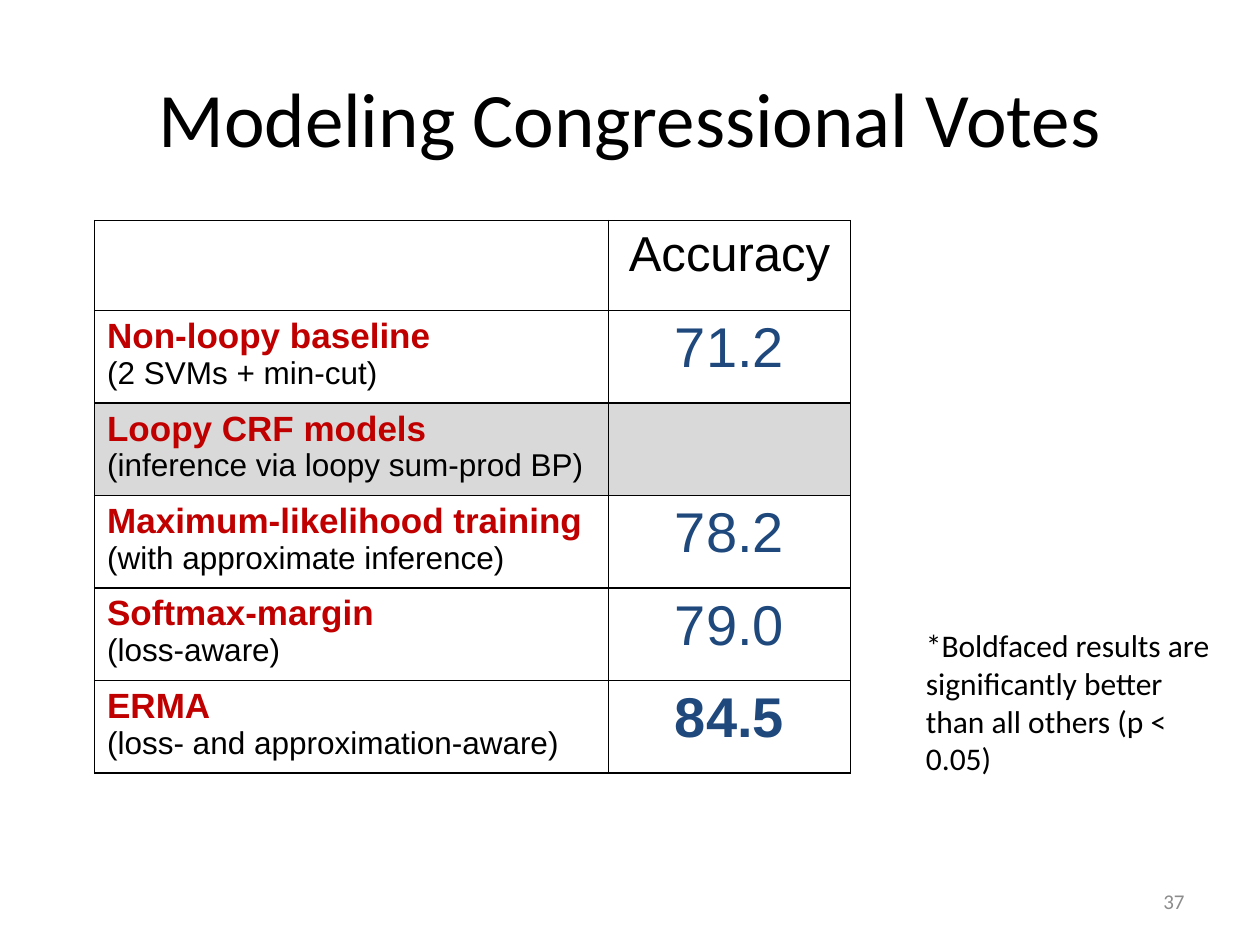
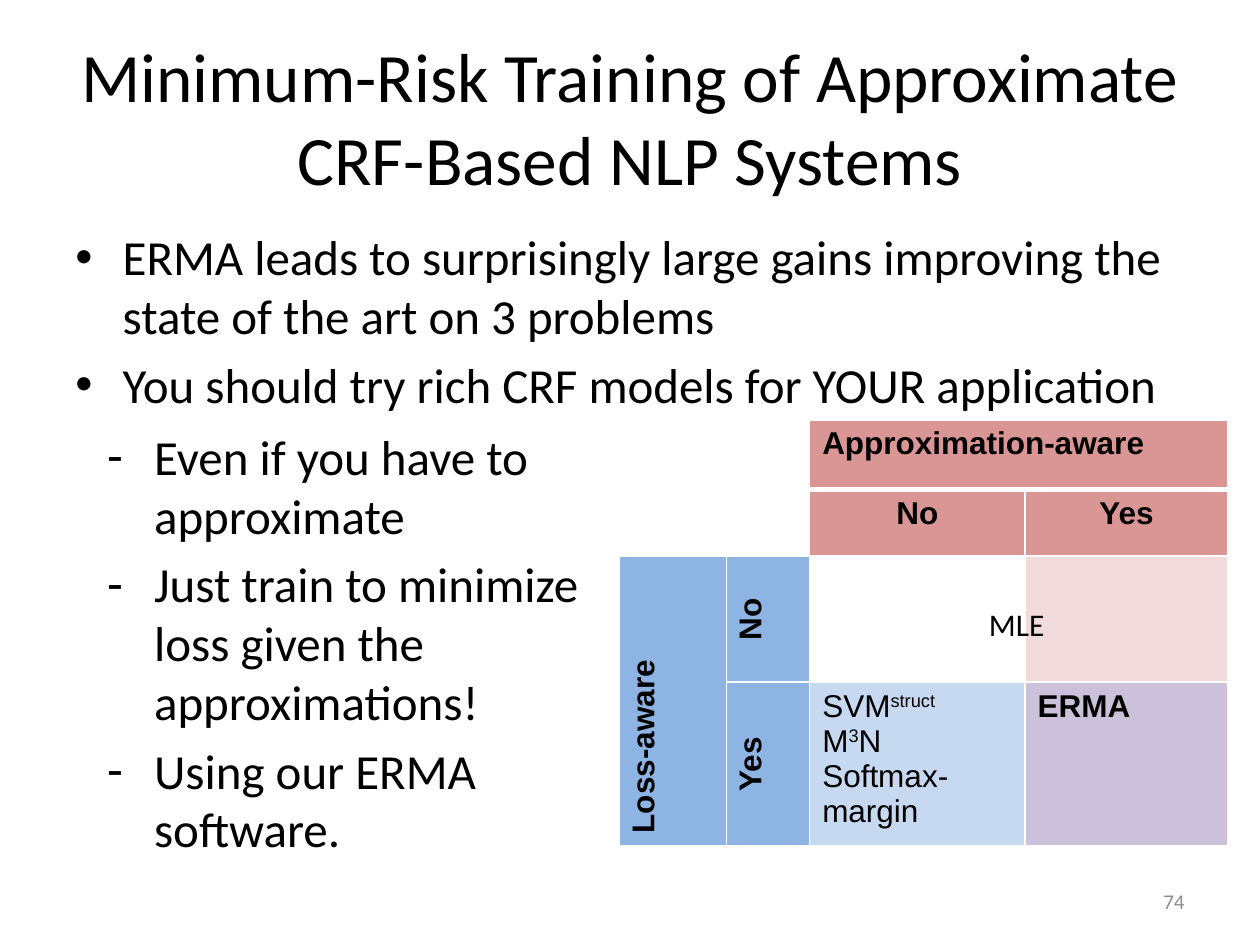
from pptx import Presentation
from pptx import util as u
from pptx.dml.color import RGBColor
from pptx.enum import text
from pptx.oxml.ns import qn
from lxml import etree

COLORS = {
    "ink": "000000", "paper": "FFFFFF", "number": "8C8C8C",
    "method": "C00000", "score": "1F497D", "group": "D9D9D9",
    "approx": "D99694", "approx_light": "F2DCDB",
    "loss": "8EB4E3", "loss_light": "C6D9F1", "both": "CCC1DA",
}
BODY_FONT = "Calibri"
TABLE_FONT = "Arial"
LEFT, CENTER, RIGHT = text.PP_ALIGN.LEFT, text.PP_ALIGN.CENTER, text.PP_ALIGN.RIGHT
TITLE_BOX = (36, 21.6, 648, 90)
NUMBER_BOX = (516, 500.4, 168, 28.8)

VOTE_ROWS = [
    ("Non-loopy baseline", "(2 SVMs + min-cut)", "71.2"),
    ("Loopy CRF models", "(inference via loopy sum-prod BP)", ""),
    ("Maximum-likelihood training", "(with approximate inference)", "78.2"),
    ("Softmax-margin", "(loss-aware)", "79.0"),
    ("ERMA", "(loss- and approximation-aware)", "84.5"),
]
BEST_SCORE = "84.5"


def rgb(name):
    """Return the named colour."""
    return RGBColor.from_string(COLORS[name])


def style_para(para, size, color="ink", bold=False, align=LEFT, font=BODY_FONT):
    """Format a paragraph and all its runs."""
    para.alignment = align
    for span in para.runs:
        span.font.name = font
        span.font.size = u.Pt(size)
        span.font.bold = bold
        span.font.color.rgb = rgb(color)


def add_text(page, box, lines, size, color="ink", align=LEFT, anchor=text.MSO_ANCHOR.TOP):
    """Add a wrapped text box and return its text frame."""
    frame = page.shapes.add_textbox(*map(u.Pt, box)).text_frame
    frame.word_wrap = True
    frame.vertical_anchor = anchor
    frame.text = "\n".join(lines)
    for para in frame.paragraphs:
        style_para(para, size, color, align=align)
    return frame


def add_bullets(page, box, lines, mark):
    """Add a list with hanging bullets."""
    size, indent = 28, u.Pt(27)
    for para in add_text(page, box, lines, size).paragraphs:
        para.space_before = u.Pt(size * 0.2)
        props = para._p.get_or_add_pPr()
        props.set("marL", str(indent))
        props.set("indent", str(-indent))
        etree.SubElement(props, qn("a:buFont")).set("typeface", "Arial")
        etree.SubElement(props, qn("a:buChar")).set("char", mark)


def add_frame(deck, title, title_size, number):
    """Add a page with its title and page number."""
    page = deck.slides.add_slide(deck.slide_layouts[6])
    middle = text.MSO_ANCHOR.MIDDLE
    add_text(page, TITLE_BOX, [title], title_size, align=CENTER, anchor=middle)
    add_text(page, NUMBER_BOX, [number], 12, "number", RIGHT, middle)
    return page


def set_borders(cell, color, top=1, bottom=1):
    """Draw the four borders of a cell."""
    props = cell._tc.get_or_add_tcPr()
    for side, width in (("L", 1), ("R", 1), ("T", top), ("B", bottom)):
        line = etree.SubElement(props, qn(f"a:ln{side}"), w=str(u.Pt(width)))
        fill = etree.SubElement(line, qn("a:solidFill"))
        etree.SubElement(fill, qn("a:srgbClr"), val=COLORS[color])


def add_grid(page, box, columns, rows):
    """Add a plain table with the given column widths and row heights."""
    table = page.shapes.add_table(len(rows), len(columns), *map(u.Pt, box)).table
    table.first_row = table.horz_banding = False
    for column, width in zip(table.columns, columns):
        column.width = u.Pt(width)
    for row, height in zip(table.rows, rows):
        row.height = u.Pt(height)
    return table


def fill_cell(cell, color):
    """Fill a cell with a solid colour."""
    cell.fill.solid()
    cell.fill.fore_color.rgb = rgb(color)


def add_votes_table(page, box):
    """Add the table of accuracy per training method."""
    height = box[3] / (len(VOTE_ROWS) + 1)
    table = add_grid(page, box, [box[2] * 0.68, box[2] * 0.32],
                     [height] * (len(VOTE_ROWS) + 1))
    for cell in table.iter_cells():
        set_borders(cell, "ink")
        fill_cell(cell, "paper")
    heading = table.cell(0, 1)
    heading.text = "Accuracy"
    style_para(heading.text_frame.paragraphs[0], 28, align=CENTER, font=TABLE_FONT)
    for index, (method, detail, score) in enumerate(VOTE_ROWS, 1):
        label, value = table.cell(index, 0), table.cell(index, 1)
        label.text = f"{method}\n{detail}"
        first, second = label.text_frame.paragraphs
        style_para(first, 20, "method", True, font=TABLE_FONT)
        style_para(second, 18, font=TABLE_FONT)
        if score:
            value.text = score
            style_para(value.text_frame.paragraphs[0], 32, "score",
                       score == BEST_SCORE, CENTER, TABLE_FONT)
        else:
            fill_cell(label, "group")
            fill_cell(value, "group")


def add_methods(cell):
    """List the loss-aware methods with their superscripts."""
    lines = [[("SVM", 0), ("struct", 1)], [("M", 0), ("3", 1), ("N", 0)],
             [("Softmax-margin", 0)]]
    frame = cell.text_frame
    for index, parts in enumerate(lines):
        para = frame.add_paragraph() if index else frame.paragraphs[0]
        for words, raised in parts:
            span = para.add_run()
            span.text = words
            if raised:
                span.font._element.set("baseline", "30000")
        style_para(para, 18, font=TABLE_FONT)


def add_awareness_table(page, box):
    """Add the two-way table of loss and approximation awareness."""
    table = add_grid(page, box, [61.2, 47.5, 123.1, 115.9], [39.6, 38.2, 72, 72])
    fills = [
        ["paper", "paper", "approx", "approx"],
        ["paper", "paper", "approx", "approx"],
        ["loss", "loss", "paper", "approx_light"],
        ["loss", "loss", "loss_light", "both"],
    ]
    for row, names in enumerate(fills):
        for column, name in enumerate(names):
            cell = table.cell(row, column)
            set_borders(cell, "paper", 3 if row == 1 else 1, 3 if row == 0 else 1)
            fill_cell(cell, name)
    table.cell(0, 2).merge(table.cell(0, 3))
    table.cell(2, 0).merge(table.cell(3, 0))
    labels = [
        (0, 2, "Approximation-aware", LEFT), (1, 2, "No", CENTER), (1, 3, "Yes", CENTER),
        (2, 0, "Loss-aware", LEFT), (2, 1, "No", CENTER), (3, 1, "Yes", CENTER),
        (3, 3, "ERMA", LEFT),
    ]
    for row, column, words, align in labels:
        cell = table.cell(row, column)
        cell.text = words
        style_para(cell.text_frame.paragraphs[0], 18, bold=True, align=align, font=TABLE_FONT)
        if column < 2:
            cell._tc.get_or_add_tcPr().set("vert", "vert270")
    add_methods(table.cell(3, 2))


def build_votes(deck):
    """Build the page on congressional votes."""
    page = add_frame(deck, "Modeling Congressional Votes", 44, "37")
    add_votes_table(page, (54, 126, 432, 309))
    add_text(page, (522, 354.2, 180, 94.3),
             ["*Boldfaced results are significantly better than all others (p < 0.05)"], 18)


def build_summary(deck):
    """Build the closing page on minimum-risk training."""
    page = add_frame(deck, "Minimum-Risk Training of Approximate CRF-Based NLP Systems",
                     39.6, "74")
    add_bullets(page, (36, 126, 660, 356.4), [
        "ERMA leads to surprisingly large gains improving the state of the art on 3 problems",
        "You should try rich CRF models for YOUR application"], "•")
    add_awareness_table(page, (354, 240, 347.7, 221.8))
    add_bullets(page, (54, 240, 318, 356.4), [
        "Even if you have to approximate",
        "Just train to minimize loss given the approximations!",
        "Using our ERMA software."], "-")
    add_text(page, (558, 342, 60, 28.8), ["MLE"], 18)


def main():
    """Build and save the deck."""
    deck = Presentation()
    deck.slide_width, deck.slide_height = u.Pt(720), u.Pt(540)
    build_votes(deck)
    build_summary(deck)
    deck.save("out.pptx")


if __name__ == "__main__":
    main()
